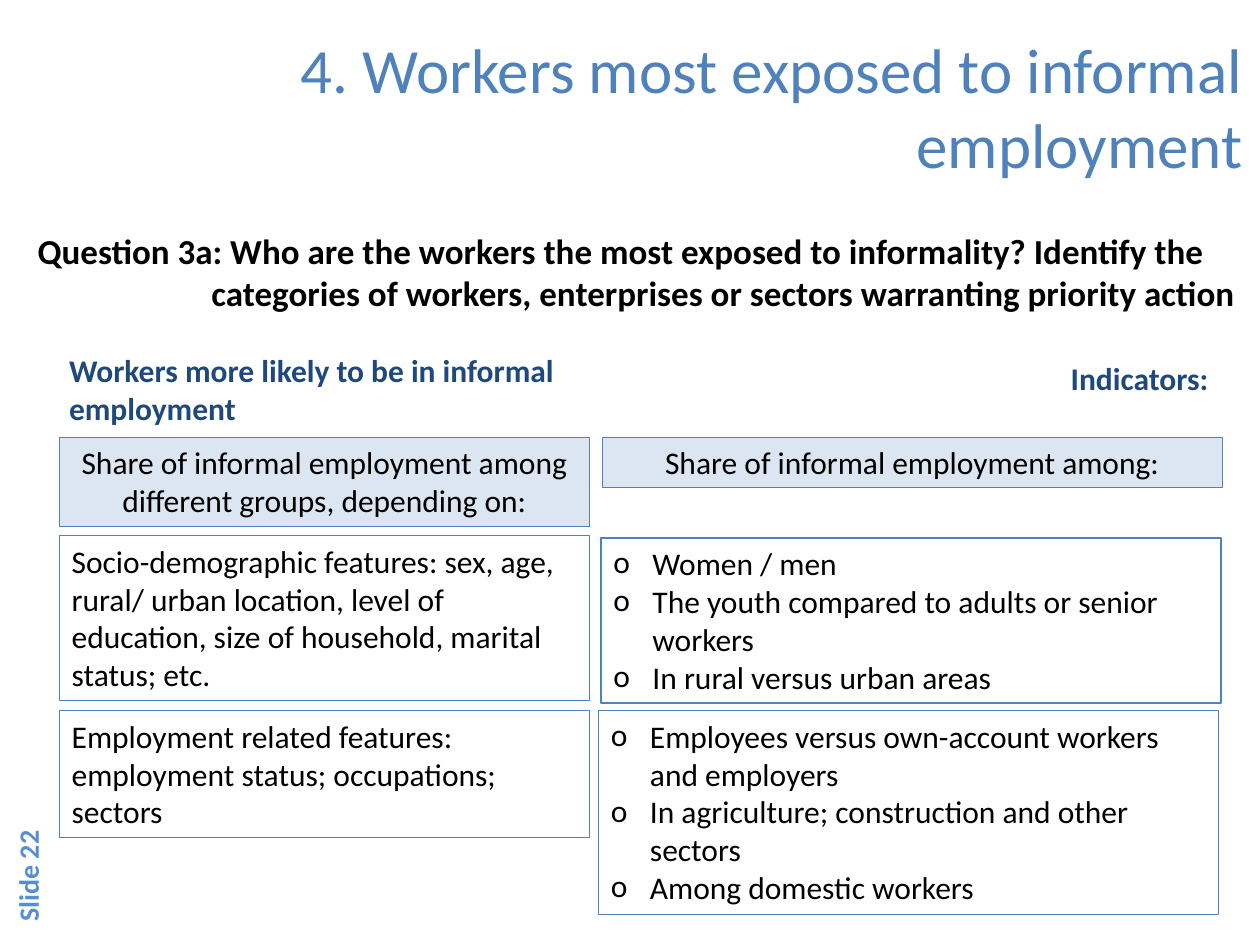
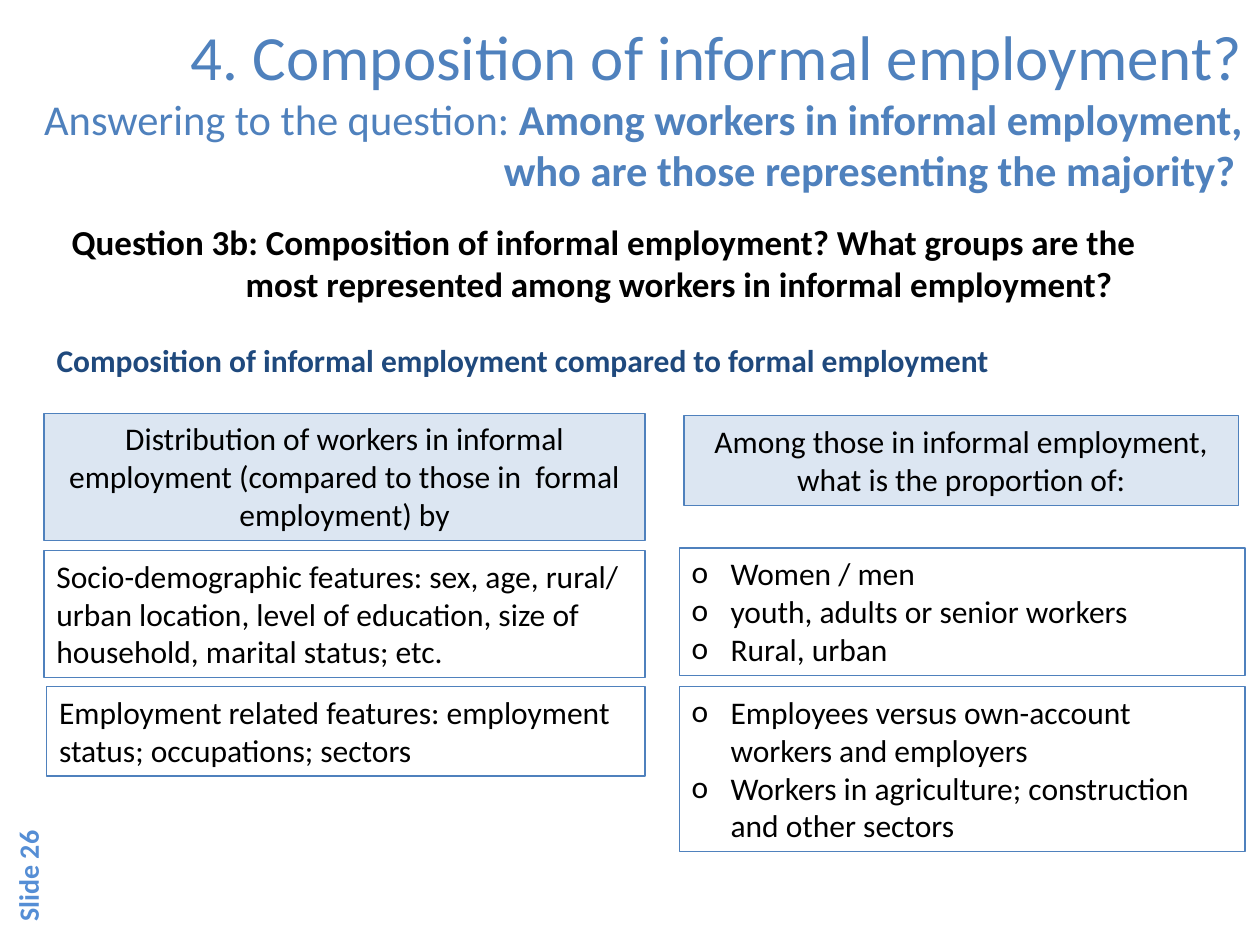
"""Build two slides on workers exposed to informal employment."""
from dataclasses import dataclass

from lxml.etree import SubElement
from pptx import Presentation
from pptx.dml.color import RGBColor
from pptx.enum.shapes import MSO_SHAPE as Preset
from pptx.enum.text import MSO_ANCHOR as Anchor, MSO_AUTO_SIZE as AutoSize, PP_ALIGN as Align
from pptx.oxml.ns import qn
from pptx.util import Inches, Pt


@dataclass(frozen=True)
class Theme:
    font: str = "Calibri"
    accent: str = "4F81BD"
    heading: str = "1F497D"
    number: str = "558ED5"
    panel: str = "DCE6F2"
    text: str = "000000"
    title_end: str = "060606"
    title_size: float = 36
    subtitle_size: float = 24.3
    question_size: float = 20
    body_size: float = 18
    number_size: float = 16
    border: float = 0.75
    question_indent: float = 1.38
    bullet_indent: float = 0.31


class Deck:
    def __init__(self, theme):
        self.theme = theme
        self.presentation = Presentation()
        self.presentation.slide_width = Inches(10)
        self.presentation.slide_height = Inches(7.5)
        self.slide = None

    def add_slide(self, number):
        self.slide = self.presentation.slides.add_slide(self.presentation.slide_layouts[6])
        label = self.text_box(-0.42, 6.57, 1.28, 0.4)
        label.rotation = 270
        label.text_frame.vertical_anchor = Anchor.MIDDLE
        self.run(label.text_frame.paragraphs[0], f"Slide {number}",
                 self.theme.number_size, self.theme.number, True)

    def text_box(self, left, top, width, height):
        shape = self.slide.shapes.add_textbox(*map(Inches, (left, top, width, height)))
        shape.text_frame.word_wrap = True
        return shape

    def run(self, paragraph, text, size, color, bold=False):
        run = paragraph.add_run()
        run.text = text
        run.font.name = self.theme.font
        run.font.size = Pt(size)
        run.font.bold = bold
        run.font.color.rgb = RGBColor.from_string(color)

    def hang(self, paragraph, indent, bullet=None):
        properties = paragraph._p.get_or_add_pPr()
        properties.set("marL", str(Inches(indent)))
        properties.set("indent", str(-Inches(indent)))
        if bullet:
            SubElement(properties, qn("a:buFont"), typeface=self.theme.font)
            SubElement(properties, qn("a:buChar"), char=bullet)

    def title(self, heading, subtitle_runs=()):
        frame = self.text_box(0.2, 0.13, 9.76, 1.42).text_frame
        frame.vertical_anchor = Anchor.MIDDLE
        paragraph = frame.paragraphs[0]
        paragraph.alignment = Align.RIGHT
        self.run(paragraph, heading, self.theme.title_size, self.theme.accent)
        if subtitle_runs:
            paragraph.add_line_break()
        for text, bold in subtitle_runs:
            self.run(paragraph, text, self.theme.subtitle_size, self.theme.accent, bold)
        if subtitle_runs:
            self.run(paragraph, " ", self.theme.body_size, self.theme.title_end)

    def question(self, left, top, width, text):
        frame = self.text_box(left, top, width, 0.77).text_frame
        frame.auto_size = AutoSize.SHAPE_TO_FIT_TEXT
        self.hang(frame.paragraphs[0], self.theme.question_indent)
        self.run(frame.paragraphs[0], text, self.theme.question_size, self.theme.text, True)

    def subheading(self, left, top, width, height, text, align=Align.LEFT):
        frame = self.text_box(left, top, width, height).text_frame
        frame.auto_size = AutoSize.SHAPE_TO_FIT_TEXT
        frame.paragraphs[0].alignment = align
        self.run(frame.paragraphs[0], text, self.theme.body_size, self.theme.heading, True)

    def box(self, left, top, width, height, lines, align=Align.LEFT, fill=None, bullet=None):
        shape = self.slide.shapes.add_shape(
            Preset.RECTANGLE, *map(Inches, (left, top, width, height)))
        shape.shadow.inherit = False
        shape.line.color.rgb = RGBColor.from_string(self.theme.accent)
        shape.line.width = Pt(self.theme.border)
        if fill:
            shape.fill.solid()
            shape.fill.fore_color.rgb = RGBColor.from_string(fill)
        else:
            shape.fill.background()
        frame = shape.text_frame
        frame.word_wrap = True
        frame.auto_size = AutoSize.SHAPE_TO_FIT_TEXT
        frame.vertical_anchor = Anchor.TOP
        for index, line in enumerate(lines):
            paragraph = frame.add_paragraph() if index else frame.paragraphs[0]
            paragraph.alignment = align
            if bullet:
                self.hang(paragraph, self.theme.bullet_indent, bullet)
            self.run(paragraph, line, self.theme.body_size, self.theme.text)

    def header(self, left, top, width, height, text):
        self.box(left, top, width, height, [text], Align.CENTER, self.theme.panel)

    def bullets(self, left, top, width, height, lines):
        self.box(left, top, width, height, lines, bullet="o")


SOCIAL_FEATURES = ("Socio-demographic features: sex, age, rural/ urban location, level of "
                   "education, size of household, marital status; etc.")
JOB_FEATURES = "Employment related features: employment status; occupations; sectors"


def add_exposure_slide(deck):
    deck.add_slide(22)
    deck.title("4. Workers most exposed to informal employment")
    deck.question(0.2, 1.77, 9.76,
                  "Question 3a: Who are the workers the most exposed to informality? Identify the "
                  "categories of workers, enterprises or sectors warranting priority action")
    deck.subheading(0.45, 2.74, 4.23, 0.71, "Workers more likely to be in informal employment")
    deck.subheading(5.46, 2.8, 4.23, 0.4, "Indicators:", Align.RIGHT)
    left, width = 0.47, 4.21
    deck.header(left, 3.47, width, 0.71,
                "Share of informal employment among different groups, depending on:")
    deck.box(left, 4.25, width, 1.31, [SOCIAL_FEATURES])
    deck.box(left, 5.64, width, 1.01, [JOB_FEATURES])
    indicator_width = 4.92
    deck.header(4.78, 3.47, indicator_width, 0.4, "Share of informal employment among:")
    deck.bullets(4.77, 4.27, indicator_width, 1.31, [
        "Women / men",
        "The youth compared to adults or senior workers",
        "In rural versus urban areas"])
    deck.bullets(4.75, 5.64, indicator_width, 1.62, [
        "Employees versus own-account workers and employers",
        "In agriculture; construction and other sectors",
        "Among domestic workers"])


def add_composition_slide(deck):
    deck.add_slide(26)
    deck.title("4. Composition of informal employment?", [
        ("Answering to the question: ", False),
        ("Among workers in informal employment, who are those representing the majority?", True)])
    deck.question(0.47, 1.7, 9.21,
                  "Question 3b: Composition of informal employment? What groups are the most "
                  "represented among workers in informal employment?")
    deck.subheading(0.35, 2.66, 8.19, 0.4,
                    "Composition of informal employment compared to formal employment")
    left, width = 0.35, 4.77
    deck.header(left, 3.28, width, 1.01,
                "Distribution of workers in informal employment (compared to those in  formal "
                "employment) by")
    deck.box(left, 4.37, width, 1.01, [SOCIAL_FEATURES])
    deck.box(0.37, 5.45, 4.75, 0.71, [JOB_FEATURES])
    deck.header(5.43, 3.3, 4.4, 0.71,
                "Among those in informal employment, what is the proportion of:")
    indicator_left, indicator_width = 5.39, 4.49
    deck.bullets(indicator_left, 4.35, indicator_width, 1.01, [
        "Women / men",
        "youth, adults or senior workers",
        "Rural, urban"])
    deck.bullets(indicator_left, 5.45, indicator_width, 1.31, [
        "Employees versus own-account workers and employers",
        "Workers in agriculture; construction and other sectors"])


def main():
    deck = Deck(Theme())
    add_exposure_slide(deck)
    add_composition_slide(deck)
    deck.presentation.save("out.pptx")


if __name__ == "__main__":
    main()
